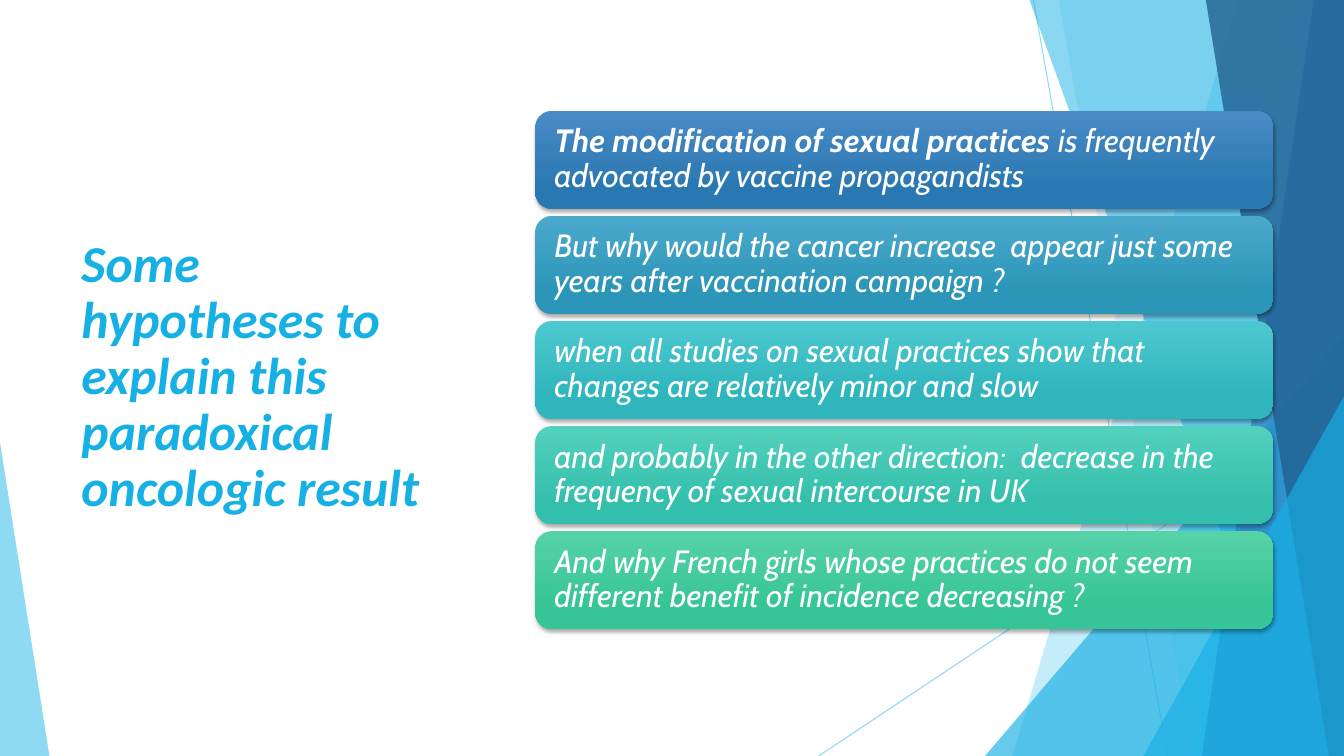
from dataclasses import dataclass

from lxml import etree
from pptx import Presentation
from pptx.dml.color import RGBColor
from pptx.enum.shapes import MSO_CONNECTOR, MSO_SHAPE
from pptx.enum.text import MSO_ANCHOR, PP_ALIGN
from pptx.oxml.ns import qn
from pptx.util import Inches, Pt


@dataclass(frozen=True)
class Theme:
    white: str = "FFFFFF"
    shadow: str = "000000"
    sky: str = "5FCBEF"
    cyan: str = "17B0E4"
    blue: str = "2E83C3"
    navy: str = "226292"
    title_font: str = "Calibri"
    card_font: str = "Cabin"
    title_size: int = 37
    card_size: int = 23
    card_gradients: tuple = (
        ("4A8BC6", "2A78B2"),
        ("4BA9CC", "2C96B8"),
        ("4DC8D0", "2FB5BC"),
        ("52D1BE", "34BFAC"),
        ("56D2A7", "36C596"),
    )


@dataclass(frozen=True)
class Box:
    left: float
    top: float
    width: float
    height: float

    @property
    def right(self):
        return self.left + self.width

    @property
    def bottom(self):
        return self.top + self.height

    def lengths(self):
        return [Inches(n) for n in (self.left, self.top, self.width, self.height)]


THEME = Theme()
PAGE = Box(0, 0, 13.33, 7.5)
TITLE = "Some hypotheses to explain this paradoxical oncologic result"
HYPOTHESES = (
    ("The modification of sexual practices ",
     "is frequently advocated by vaccine propagandists"),
    ("", "But why would the cancer increase  appear just some years after "
         "vaccination campaign ?"),
    ("", "when all studies on sexual practices show that changes are "
         "relatively minor and slow"),
    ("", "and probably in the other direction:  decrease in the frequency "
         "of sexual intercourse in UK"),
    ("", "And why French girls whose practices do not seem different benefit "
         "of incidence decreasing ?"),
)


def rgb(color):
    return RGBColor.from_string(color)


def set_opacity(shape, percent):
    for color in shape.element.spPr.iter(qn("a:srgbClr")):
        etree.SubElement(color, qn("a:alpha"), val=str(percent * 1000))


def paint_facet(shape, color, opacity):
    shape.shadow.inherit = False
    shape.fill.solid()
    shape.fill.fore_color.rgb = rgb(color)
    shape.line.fill.background()
    set_opacity(shape, opacity)


def add_hairline(slide, start, end):
    points = [Inches(n) for n in (*start, *end)]
    line = slide.shapes.add_connector(MSO_CONNECTOR.STRAIGHT, *points)
    line.line.color.rgb = rgb(THEME.sky)
    line.line.width = Pt(0.75)
    set_opacity(line, 70)
    etree.SubElement(line.element.spPr, qn("a:effectLst"))


def add_panel(slide, box, top_x, bottom_x, color, opacity):
    corners = [(box.right, box.top), (box.right, box.bottom),
               (box.left + bottom_x, box.bottom)]
    builder = slide.shapes.build_freeform(Inches(box.left + top_x), Inches(box.top))
    builder.add_line_segments([(Inches(x), Inches(y)) for x, y in corners])
    paint_facet(builder.convert_to_shape(), color, opacity)


def add_peak(slide, box, apex, color, opacity):
    peak = slide.shapes.add_shape(MSO_SHAPE.ISOSCELES_TRIANGLE, *box.lengths())
    peak.adjustments[0] = apex
    paint_facet(peak, color, opacity)


def add_backdrop(slide, box):
    def corner_box(width, height):
        return Box(box.right - width, box.bottom - height, width, height)

    add_hairline(slide, (box.left + 10.25, box.top), (box.left + 11.58, box.bottom))
    add_hairline(slide, (box.right, box.top + 4.03), (box.left + 8.12, box.bottom))
    add_panel(slide, box, 12.28, 10.04, THEME.sky, 36)
    add_panel(slide, box, 10.5, 11.83, THEME.sky, 20)
    add_peak(slide, corner_box(3.56, 4.17), 1, THEME.cyan, 66)
    add_panel(slide, box, 10.21, 12.91, THEME.cyan, 50)
    add_panel(slide, box, 13.03, 11.92, THEME.blue, 70)
    add_panel(slide, box, 11.96, 13.18, THEME.navy, 80)
    add_peak(slide, corner_box(1.99, 3.57), 1, THEME.cyan, 66)
    add_peak(slide, Box(box.left, box.bottom - 3.11, 0.49, 3.11), 0, THEME.sky, 70)


def style_paragraph(paragraph, font_name, size, color):
    paragraph.alignment = PP_ALIGN.LEFT
    paragraph.line_spacing = 0.9
    font = paragraph.font
    font.name, font.size, font.italic = font_name, Pt(size), True
    font.color.rgb = rgb(color)


def add_title(slide, box):
    frame = slide.shapes.add_textbox(*box.lengths()).text_frame
    frame.word_wrap = True
    frame.vertical_anchor = MSO_ANCHOR.MIDDLE
    paragraph = frame.paragraphs[0]
    paragraph.text = TITLE
    style_paragraph(paragraph, THEME.title_font, THEME.title_size, THEME.cyan)
    paragraph.font.bold = True


def add_card_shadow(card):
    card.shadow.inherit = False
    effects = card.element.spPr.find(qn("a:effectLst"))
    shadow = etree.SubElement(effects, qn("a:outerShdw"), blurRad=str(Pt(3)),
                              dist=str(Pt(2)), dir="5400000", rotWithShape="0")
    color = etree.SubElement(shadow, qn("a:srgbClr"), val=THEME.shadow)
    etree.SubElement(color, qn("a:alpha"), val="35000")


def add_card(slide, box, lead, body, gradient):
    card = slide.shapes.add_shape(MSO_SHAPE.ROUNDED_RECTANGLE, *box.lengths())
    card.line.fill.background()
    card.fill.gradient()
    card.fill.gradient_angle = 270
    for stop, color, position in zip(card.fill.gradient_stops, gradient, (0, 0.78)):
        stop.color.rgb = rgb(color)
        stop.position = position
    add_card_shadow(card)

    frame = card.text_frame
    frame.word_wrap = True
    frame.vertical_anchor = MSO_ANCHOR.MIDDLE
    frame.margin_left = frame.margin_right = Inches(0.14)
    frame.margin_top = frame.margin_bottom = Inches(0.1)
    paragraph = frame.paragraphs[0]
    style_paragraph(paragraph, THEME.card_font, THEME.card_size, THEME.white)
    if lead:
        run = paragraph.add_run()
        run.text = lead
        run.font.bold = True
    paragraph.add_run().text = body


def add_hypotheses(slide, box):
    height = 0.97
    pitch = (box.height - height) / (len(HYPOTHESES) - 1)
    for index, (lead, body) in enumerate(HYPOTHESES):
        card_box = Box(box.left, box.top + index * pitch, box.width, height)
        add_card(slide, card_box, lead, body, THEME.card_gradients[index])


def main():
    presentation = Presentation()
    presentation.slide_width = Inches(PAGE.width)
    presentation.slide_height = Inches(PAGE.height)
    slide = presentation.slides.add_slide(presentation.slide_layouts[6])
    add_backdrop(slide, PAGE)
    add_title(slide, Box(0.71, 1.51, 3.88, 4.48))
    add_hypotheses(slide, Box(5.31, 1.1, 7.32, 5.14))
    presentation.save("out.pptx")


if __name__ == "__main__":
    main()
